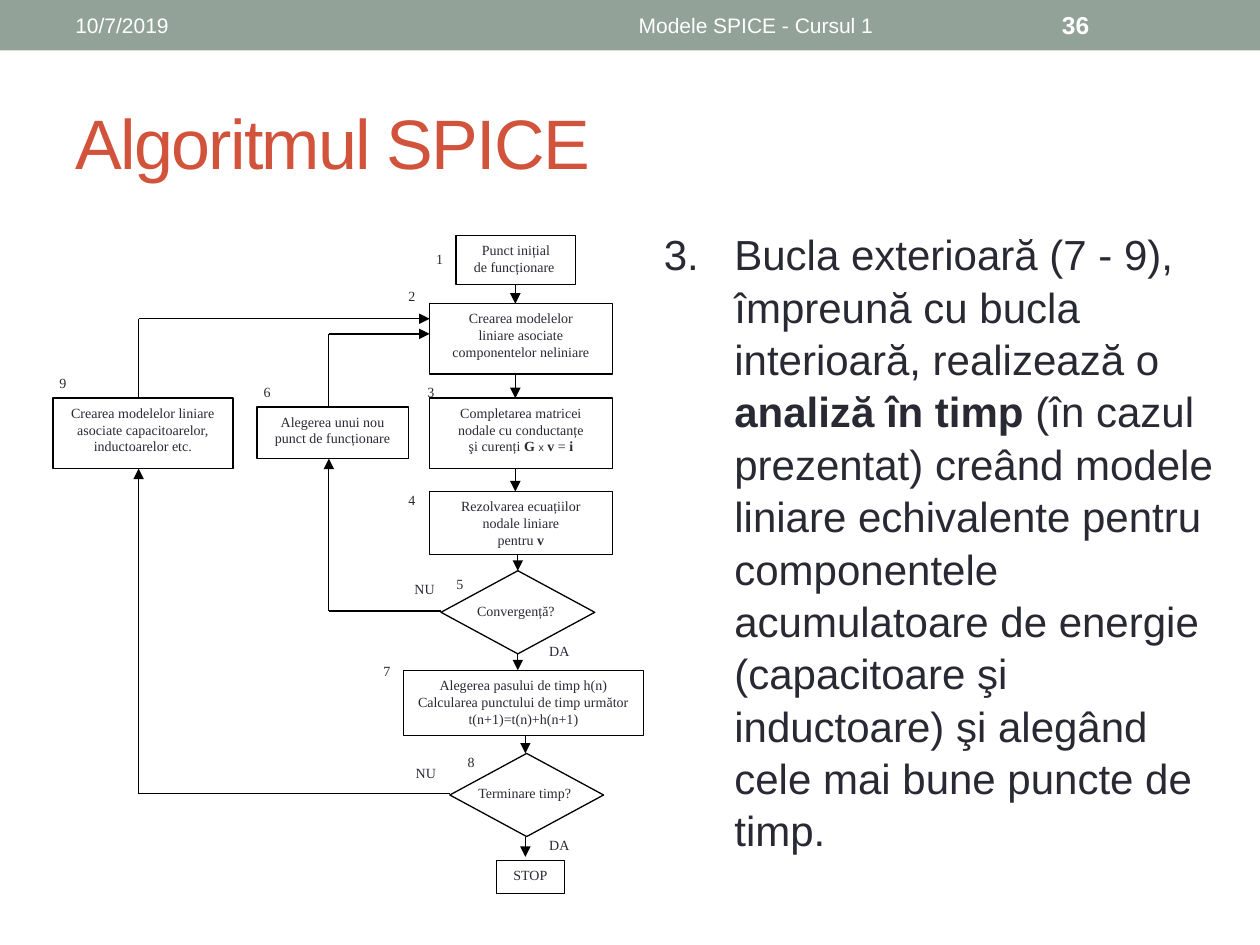
"""Builds the SPICE algorithm slide: a flowchart beside a numbered explanation."""
from lxml.etree import SubElement
from pptx import Presentation
from pptx.dml.color import RGBColor
from pptx.enum.shapes import MSO_CONNECTOR, MSO_SHAPE
from pptx.enum.text import MSO_ANCHOR, PP_ALIGN
from pptx.oxml.ns import qn
from pptx.util import Inches, Pt

WIDTH, HEIGHT = 10, 7.5
WHITE, BLACK, INK, ACCENT, BAR = "FFFFFF", "000000", "292934", "D2533C", "93A299"
SANS, SERIF = "Arial", "Times New Roman"
BOLD = {"bold": True}

TITLE = "Algoritmul SPICE"
HEADER = [
    ("10/7/2019", 0.5, 3.17, PP_ALIGN.LEFT, {"size": 12}),
    ("Modele SPICE - Cursul 1", 3.75, 4.5, PP_ALIGN.CENTER, {"size": 12}),
    ("36", 8.33, 1.17, PP_ALIGN.LEFT, {"size": 14, "bold": True}),
]
EXPLANATION = [
    ("Bucla exterioară (7 - 9), împreună cu bucla interioară, realizează o ", {}),
    ("analiză în timp ", BOLD),
    ("(în cazul prezentat) creând modele liniare echivalente pentru componentele "
     "acumulatoare de energie (capacitoare şi inductoare) şi alegând cele mai bune "
     "puncte de timp.", {}),
]
STEP_NUMBERS = [
    ("1", 3.41, 1.99), ("2", 3.19, 2.28), ("3", 3.34, 3.04),
    ("4", 3.19, 3.9), ("5", 3.57, 4.57), ("6", 2.04, 3.04),
    ("7", 2.99, 5.26), ("8", 3.66, 5.98), ("9", 0.42, 2.97),
]
BRANCHES = [("DA", 4.31, 5.1), ("DA", 4.31, 6.64), ("NU", 3.24, 4.61), ("NU", 3.25, 6.07)]
QUESTIONS = [("Convergență?", 3.7, 4.78), ("Terminare timp?", 3.77, 6.23)]
DIAMONDS = [(3.5, 4.53, 1.22, 0.66), (3.57, 5.98, 1.22, 0.66)]
BOXES = [
    ((3.62, 1.87, 0.95, 0.39), ["Punct inițial", "de funcționare "]),
    ((3.41, 2.41, 1.45, 0.56),
     ["Crearea modelelor", "liniare asociate", "componentelor neliniare"]),
    ((3.41, 3.16, 1.45, 0.56),
     ["Completarea matricei", "nodale cu conductanțe",
      [("şi curenți ", {}), ("G ", BOLD), ("x", {"size": 6, "font": SANS}),
       (" ", {}), ("v", BOLD), (" = ", {}), ("i", BOLD)]]),
    ((3.41, 3.9, 1.45, 0.5),
     ["Rezolvarea ecuațiilor", "nodale liniare", [("pentru ", {}), ("v", BOLD)]]),
    ((3.2, 5.32, 1.91, 0.52),
     ["Alegerea pasului de timp h(n)", "Calcularea punctului de timp următor",
      "t(n+1)=t(n)+h(n+1)"]),
    ((3.94, 6.83, 0.54, 0.26), ["STOP"]),
    ((2.04, 3.23, 1.2, 0.41), ["Alegerea unui nou", "punct de funcționare"]),
    ((0.42, 3.16, 1.43, 0.56),
     ["Crearea modelelor liniare", "asociate capacitoarelor,", "inductoarelor etc."]),
]
DOWN_ARROWS = [
    (4.09, 2.26, 2.41), (4.09, 2.97, 3.16), (4.09, 3.72, 3.9), (4.11, 4.4, 4.53),
    (4.11, 5.18, 5.32), (4.17, 5.84, 5.98), (4.17, 6.64, 6.8),
]
LOOPS = [
    {"column": 2.61, "start": (3.5, 4.85), "box": (3.64, 3.23), "end": (3.41, 2.65)},
    {"column": 1.1, "start": (3.57, 6.3), "box": (3.72, 3.16), "end": (3.41, 2.53)},
]


def color(value):
    return RGBColor.from_string(value)


def add_run(paragraph, text, size, font, ink, bold=False):
    run = paragraph.add_run()
    run.text = text
    run.font.size, run.font.name, run.font.bold = Pt(size), font, bold
    run.font.color.rgb = color(ink)
    return run


def add_box(slide, place, lines=(), kind=MSO_SHAPE.RECTANGLE, fill=WHITE,
            outline=None, inset=(0, 0)):
    shape = slide.shapes.add_shape(kind, *map(Inches, place))
    shape.shadow.inherit = False
    shape.fill.solid()
    shape.fill.fore_color.rgb = color(fill)
    if outline:
        shape.line.color.rgb = color(outline)
        shape.line.width = Pt(0.75)
    else:
        shape.line.fill.background()
    frame = shape.text_frame
    frame.word_wrap = True
    frame.vertical_anchor = MSO_ANCHOR.TOP
    frame.margin_left = frame.margin_right = Inches(inset[0])
    frame.margin_top = frame.margin_bottom = Inches(inset[1])
    for index, line in enumerate(lines):
        paragraph = frame.add_paragraph() if index else frame.paragraphs[0]
        paragraph.alignment = PP_ALIGN.CENTER
        for text, style in [(line, {})] if isinstance(line, str) else line:
            add_run(paragraph, text, **{"size": 8, "font": SERIF, "ink": INK, **style})


def add_line(slide, start, end, arrow=False):
    connector = slide.shapes.add_connector(
        MSO_CONNECTOR.STRAIGHT, *map(Inches, (*start, *end)))
    connector.line.color.rgb = color(BLACK)
    connector.line.width = Pt(0.75)
    if arrow:
        SubElement(connector.line._get_or_add_ln(), qn("a:tailEnd"), type="triangle")
    SubElement(connector._element.spPr, qn("a:effectLst"))


def add_text_box(slide, place, anchor=MSO_ANCHOR.TOP):
    frame = slide.shapes.add_textbox(*map(Inches, place)).text_frame
    frame.word_wrap = True
    frame.vertical_anchor = anchor
    return frame.paragraphs[0]


def add_header(slide):
    add_box(slide, (0, 0, WIDTH, 0.4), fill=BAR)
    for text, left, width, alignment, style in HEADER:
        paragraph = add_text_box(slide, (left, 0.02, width, 0.36), MSO_ANCHOR.MIDDLE)
        paragraph.alignment = alignment
        add_run(paragraph, text, font=SANS, ink=WHITE, **style)


def add_title(slide):
    title = slide.shapes.title
    title.left, title.top, title.width, title.height = map(Inches, (0.5, 0.58, 9, 1.08))
    title.text_frame.vertical_anchor = MSO_ANCHOR.MIDDLE
    paragraph = title.text_frame.paragraphs[0]
    paragraph.alignment = PP_ALIGN.LEFT
    run = add_run(paragraph, TITLE, 40, SANS, ACCENT)
    run.font._element.set("spc", "-100")


def add_explanation(slide):
    paragraph = add_text_box(slide, (5.17, 1.75, 4.58, 4.95))
    paragraph.line_spacing = 1.04
    properties = paragraph._element.get_or_add_pPr()
    indent = Inches(0.56)
    properties.set("marL", str(indent))
    properties.set("indent", str(-indent))
    SubElement(properties, qn("a:buFont"), typeface=SANS)
    SubElement(properties, qn("a:buAutoNum"), type="arabicPeriod", startAt="3")
    for text, style in EXPLANATION:
        add_run(paragraph, text, 24, SANS, INK, **style)


def add_flowchart(slide):
    for labels, size in ((STEP_NUMBERS, (0.16, 0.15)), (BRANCHES, (0.26, 0.17))):
        for text, left, top in labels:
            add_box(slide, (left, top, *size), [text])
    for place, lines in BOXES:
        add_box(slide, place, lines, outline=BLACK, inset=(0.05, 0.05))
    for place in DIAMONDS:
        add_box(slide, place, kind=MSO_SHAPE.DIAMOND, outline=BLACK)
    for text, left, top in QUESTIONS:
        add_box(slide, (left, top, 0.79, 0.17), [text])
    for column, top, bottom in DOWN_ARROWS:
        add_line(slide, (column, top), (column, bottom), arrow=True)
    for loop in LOOPS:
        column, start, end = loop["column"], loop["start"], loop["end"]
        box_bottom, box_top = loop["box"]
        add_line(slide, start, (column, start[1]))
        add_line(slide, (column, start[1]), (column, box_bottom), arrow=True)
        add_line(slide, (column, box_top), (column, end[1]))
        add_line(slide, (column, end[1]), end, arrow=True)


def main():
    presentation = Presentation()
    presentation.slide_width, presentation.slide_height = Inches(WIDTH), Inches(HEIGHT)
    slide = presentation.slides.add_slide(presentation.slide_layouts[5])
    add_header(slide)
    add_title(slide)
    add_explanation(slide)
    add_flowchart(slide)
    presentation.save("out.pptx")


if __name__ == "__main__":
    main()
